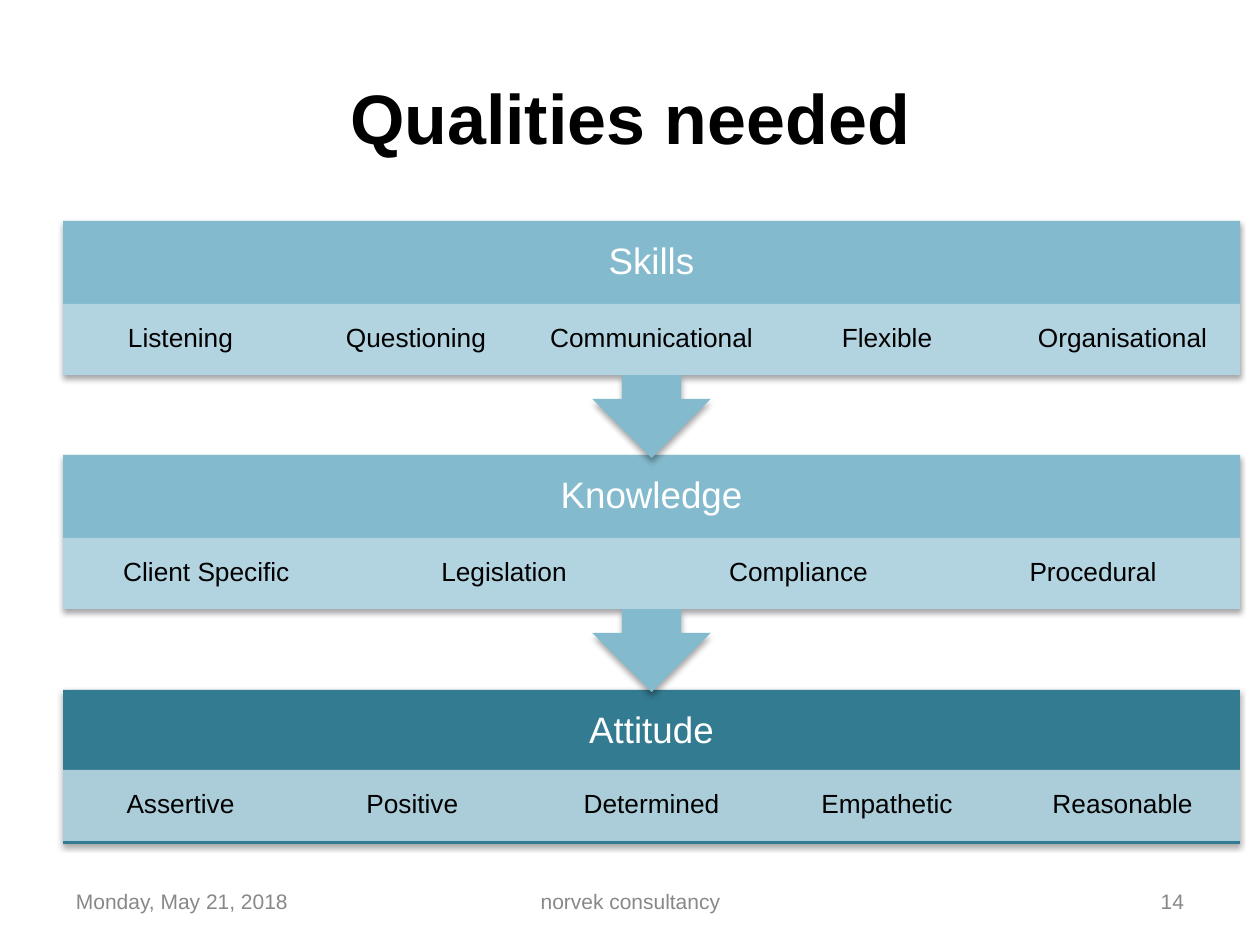
"""Build the "Qualities needed" slide with three stacked quality bands."""
from dataclasses import dataclass

from lxml import etree
from pptx import Presentation
from pptx.dml.color import RGBColor
from pptx.enum.shapes import MSO_SHAPE
from pptx.enum.text import MSO_ANCHOR, PP_ALIGN
from pptx.oxml import parse_xml
from pptx.oxml.ns import qn
from pptx.util import Emu, Pt

RECTANGLE = MSO_SHAPE.RECTANGLE
ARROW_CALLOUT = MSO_SHAPE.UP_ARROW_CALLOUT
MIDDLE = MSO_ANCHOR.MIDDLE
LEFT, CENTER, RIGHT = PP_ALIGN.LEFT, PP_ALIGN.CENTER, PP_ALIGN.RIGHT

PX_PER_INCH = 126
BAND_LEFT, BAND_WIDTH = 63, 1177
HEADING_HEIGHT, QUALITY_HEIGHT = 83, 71
CALLOUT_ADJUSTMENTS = (0.25, 0.25, 0.25, 0.65)
SHADOW_XML = (
    '<a:effectLst xmlns:a="http://schemas.openxmlformats.org/drawingml/2006/main">'
    '<a:outerShdw blurRad="39370" dist="22860" dir="5400000" rotWithShape="0">'
    '<a:srgbClr val="000000"><a:alpha val="35000"/></a:srgbClr>'
    "</a:outerShdw></a:effectLst>"
)


@dataclass(frozen=True)
class Theme:
    font: str = "Arial"
    black: str = "000000"
    white: str = "FFFFFF"
    footer: str = "888888"
    teal: str = "337B90"
    sky: str = "84BACE"
    pale: str = "B7D6E2"
    pale_alpha: int = 90
    title_size: int = 40
    heading_size: int = 21
    quality_size: int = 15
    footer_size: int = 12


@dataclass(frozen=True)
class Box:
    left: int
    top: int
    width: int
    height: int

    def emu(self) -> tuple:
        return tuple(px(v) for v in (self.left, self.top, self.width, self.height))


@dataclass(frozen=True)
class TextStyle:
    size: int
    color: str
    align: PP_ALIGN = CENTER
    bold: bool = False
    spacing: float = 1.0
    inset_x: int = 13
    inset_y: int = 6


@dataclass(frozen=True)
class Band:
    heading: str
    top: int
    height: int
    qualities_top: int
    fill: str
    qualities: tuple
    has_arrow: bool = True


THEME = Theme()
TITLE = TextStyle(THEME.title_size, THEME.black, bold=True)
HEADING = TextStyle(THEME.heading_size, THEME.white, spacing=0.9, inset_x=20, inset_y=20)
QUALITY = TextStyle(THEME.quality_size, THEME.black, spacing=0.9, inset_x=15, inset_y=3)

BANDS = (
    Band("Attitude", 690, 154, 770, THEME.teal,
         ("Assertive", "Positive ", "Determined", "Empathetic", "Reasonable"), False),
    Band("Knowledge", 455, 237, 538, THEME.sky,
         ("Client Specific ", "Legislation", "Compliance", "Procedural")),
    Band("Skills", 221, 237, 304, THEME.sky,
         ("Listening", "Questioning", "Communicational", "Flexible", "Organisational")),
)
FOOTERS = (
    ("Monday, May 21, 2018", Box(63, 876, 294, 50), LEFT),
    ("norvek consultancy", Box(431, 876, 399, 50), CENTER),
    ("14", Box(903, 876, 294, 50), RIGHT),
)


def px(length: int) -> Emu:
    """Turn px into EMU."""
    return Emu(round(length * 914400 / PX_PER_INCH))


def write(shape, text: str, style: TextStyle) -> None:
    """Set and format the one-line text of a shape."""
    frame = shape.text_frame
    frame.word_wrap = True
    frame.vertical_anchor = MIDDLE
    frame.margin_left = frame.margin_right = px(style.inset_x)
    frame.margin_top = frame.margin_bottom = px(style.inset_y)
    frame.text = text
    paragraph = frame.paragraphs[0]
    paragraph.alignment = style.align
    paragraph.line_spacing = style.spacing
    font = paragraph.runs[0].font
    font.name, font.size, font.bold = THEME.font, Pt(style.size), style.bold
    font.color.rgb = RGBColor.from_string(style.color)


def add_text(slide, box: Box, text: str, style: TextStyle) -> None:
    """Add a text box."""
    write(slide.shapes.add_textbox(*box.emu()), text, style)


def add_block(slide, preset: MSO_SHAPE, box: Box, color: str):
    """Add a filled shape without outline or shadow."""
    block = slide.shapes.add_shape(preset, *box.emu())
    block.shadow.inherit = False
    block.fill.solid()
    block.fill.fore_color.rgb = RGBColor.from_string(color)
    block.line.fill.background()
    return block


def add_base(slide, band: Band) -> None:
    """Add the shadowed base of a band, with its downward arrow if it has one."""
    box = Box(BAND_LEFT, band.top, BAND_WIDTH, band.height)
    base = add_block(slide, ARROW_CALLOUT if band.has_arrow else RECTANGLE, box, band.fill)
    if band.has_arrow:
        base.rotation = 180
        for index, value in enumerate(CALLOUT_ADJUSTMENTS):
            base.adjustments[index] = value
    properties = base._element.spPr
    properties.replace(properties.find(qn("a:effectLst")), parse_xml(SHADOW_XML))


def add_quality(slide, box: Box, text: str) -> None:
    """Add a translucent quality cell."""
    cell = add_block(slide, RECTANGLE, box, THEME.pale)
    color = cell._element.spPr.find(qn("a:solidFill"))[0]
    etree.SubElement(color, qn("a:alpha")).set("val", str(THEME.pale_alpha * 1000))
    write(cell, text, QUALITY)


def add_band(slide, band: Band) -> None:
    """Add a band with its heading and equally wide qualities."""
    add_base(slide, band)
    add_text(slide, Box(BAND_LEFT, band.top, BAND_WIDTH, HEADING_HEIGHT), band.heading, HEADING)
    count = len(band.qualities)
    edges = [BAND_LEFT + round(BAND_WIDTH * i / count) for i in range(count + 1)]
    for quality, left, right in zip(band.qualities, edges, edges[1:]):
        add_quality(slide, Box(left, band.qualities_top, right - left, QUALITY_HEIGHT), quality)


def main() -> None:
    """Build and save the slide."""
    deck = Presentation()
    deck.slide_width, deck.slide_height = px(1260), px(945)
    slide = deck.slides.add_slide(deck.slide_layouts[6])
    for text, box, align in FOOTERS:
        add_text(slide, box, text, TextStyle(THEME.footer_size, THEME.footer, align))
    for band in BANDS:
        add_band(slide, band)
    add_text(slide, Box(63, 38, 1134, 158), "Qualities needed", TITLE)
    deck.save("out.pptx")


if __name__ == "__main__":
    main()
